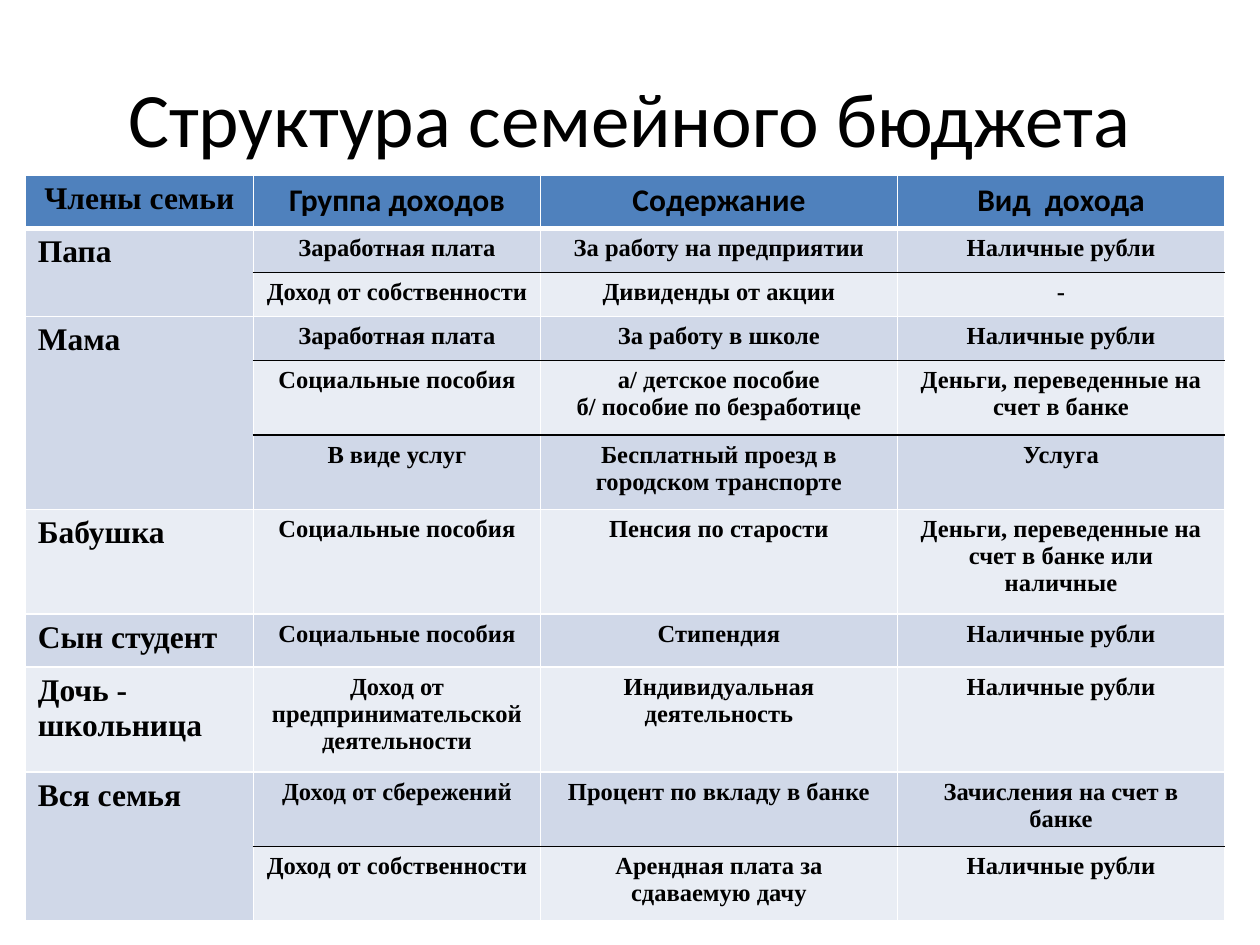
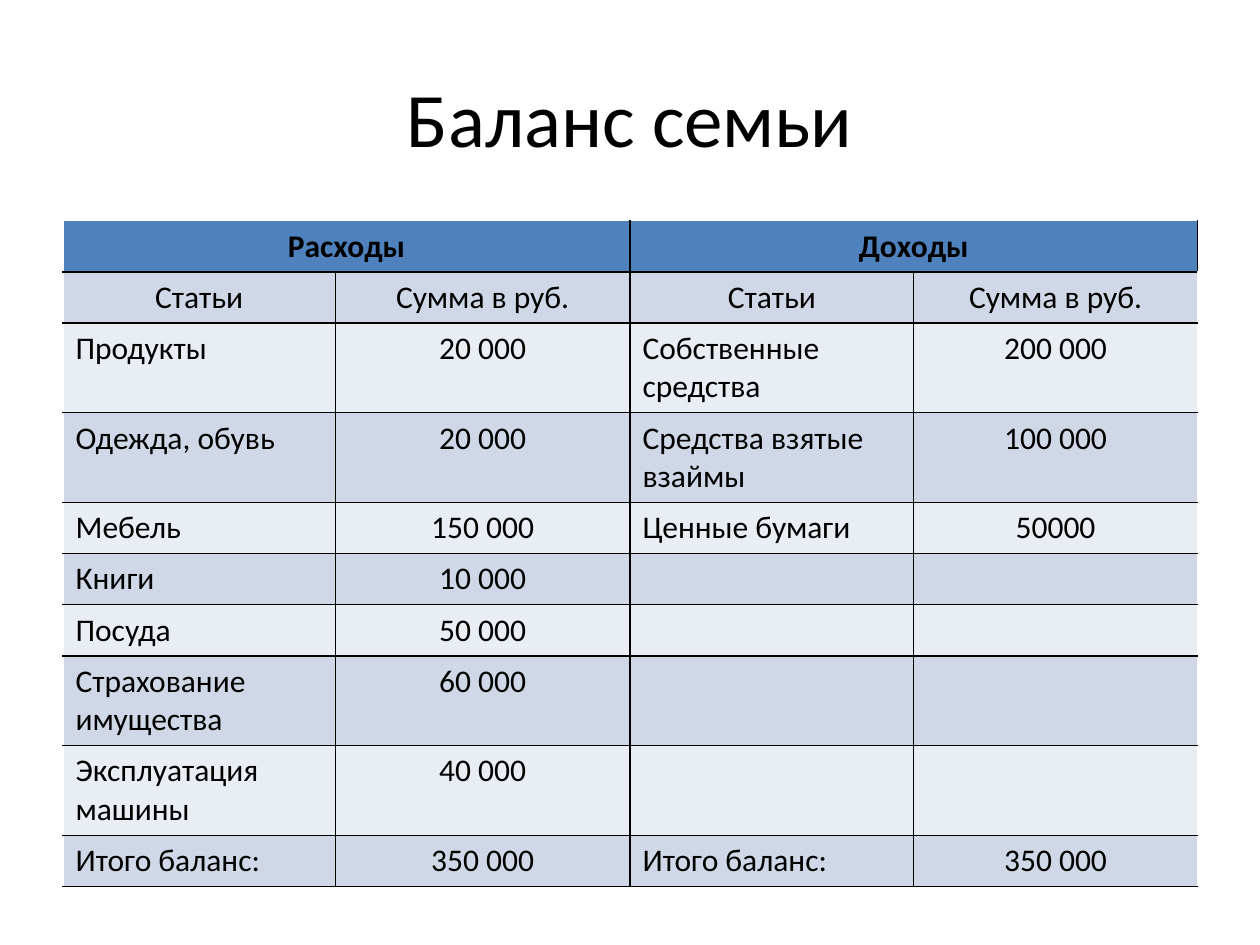
from lxml import etree
from pptx import Presentation
from pptx.dml.color import RGBColor as RGB
from pptx.enum.text import MSO_ANCHOR as ANCHOR, PP_ALIGN as ALIGN
from pptx.oxml.ns import qn
from pptx.util import Cm, Pt

COLORS = {"text": "000000", "header": "4F81BD", "dark_band": "D0D8E8",
          "light_band": "E9EDF4", "white": "FFFFFF", "black": "000000"}
SANS, SERIF = "Calibri", "Times New Roman"


def style_text(p, align, **formats):
    p.alignment = align
    for r in p.runs:
        for name, value in formats.items():
            setattr(r.font, name, value)
        r.font.color.rgb = RGB.from_string(COLORS["text"])


def set_borders(cell, edges):
    tcPr = cell._tc.get_or_add_tcPr()
    for k, (side, (color, width)) in enumerate(edges.items()):
        ln = etree.Element(qn(f"a:ln{side}"), w=str(Pt(width)))
        fill = etree.SubElement(ln, qn("a:solidFill"))
        etree.SubElement(fill, qn("a:srgbClr"), val=COLORS[color])
        tcPr.insert(k, ln)


# Income by family member; None marks a cell covered by a merge
income_rows = [
    ["Члены семьи", "Группа доходов", "Содержание", "Вид  дохода"],
    ["Папа", "Заработная плата", "За работу на предприятии", "Наличные рубли"],
    [None, "Доход от собственности", "Дивиденды от акции", "-"],
    ["Мама", "Заработная плата", "За работу в школе", "Наличные рубли"],
    [None, "Социальные пособия", "а/ детское пособие\nб/ пособие по безработице",
     "Деньги, переведенные на счет в банке"],
    [None, "В виде услуг", "Бесплатный проезд в городском транспорте", "Услуга"],
    ["Бабушка", "Социальные пособия", "Пенсия по старости",
     "Деньги, переведенные на счет в банке или наличные"],
    ["Сын студент", "Социальные пособия", "Стипендия", "Наличные рубли"],
    ["Дочь - школьница", "Доход от предпринимательской деятельности",
     "Индивидуальная деятельность", "Наличные рубли"],
    ["Вся семья", "Доход от сбережений", "Процент по вкладу в банке",
     "Зачисления на счет в банке"],
    [None, "Доход от собственности", "Арендная плата за сдаваемую дачу",
     "Наличные рубли"],
]

# Expenses beside income
balance_rows = [
    ["Расходы", None, "Доходы", None],
    ["Статьи", "Сумма в руб.", "Статьи", "Сумма в руб."],
    ["Продукты", "20 000", "Собственные средства", "200 000"],
    ["Одежда, обувь", "20 000", "Средства взятые взаймы", "100 000"],
    ["Мебель", "150 000", "Ценные бумаги", "50000"],
    ["Книги", "10 000", "", ""],
    ["Посуда", "50 000", "", ""],
    ["Страхование имущества", "60 000", "", ""],
    ["Эксплуатация машины", "40 000", "", ""],
    ["Итого баланс:", "350 000", "Итого баланс:", "350 000"],
]

# Lengths in cm; black_h and black_v number the grid lines drawn in black
slides = [
    {"title": "Структура семейного бюджета", "rows": income_rows,
     "left": 0.51, "top": 3.53, "widths": [4.6, 5.79, 7.19, 6.6],
     "heights": [1.07] + [0.89] * 3 + [1.5] * 2 + [2.11, 1.07, 2.11] + [1.5] * 2,
     "merges": [(1, 0, 2, 0), (3, 0, 5, 0), (9, 0, 10, 0)],
     "black_h": {2, 4, 5, 10}, "black_v": set(), "black_from": 1,
     "header_line": 3, "left_cols": {0}, "left_from": 1,
     "font": SERIF, "size": 14, "bold": True},
    {"title": "Баланс семьи", "rows": balance_rows,
     "left": 1.27, "top": 4.45, "widths": [5.49, 5.94, 5.72, 5.72],
     "heights": [1.03] * 2 + [1.81] * 2 + [1.03] * 3 + [1.81] * 2 + [1.03],
     "merges": [(0, 0, 0, 1), (0, 2, 0, 3)],
     "black_h": set(range(1, 11)), "black_v": {1, 2, 3}, "black_from": 0,
     "header_line": 1, "left_cols": {0, 2}, "left_from": 2,
     "font": SANS, "size": 18, "bold": False},
]

prs = Presentation()
prs.slide_width, prs.slide_height = Cm(25.4), Cm(19.05)

for d in slides:
    s = prs.slides.add_slide(prs.slide_layouts[6])

    # Title
    tf = s.shapes.add_textbox(Cm(1.27), Cm(0.76), Cm(22.86), Cm(3.18)).text_frame
    tf.word_wrap = True
    tf.vertical_anchor = ANCHOR.MIDDLE
    tf.text = d["title"]
    style_text(tf.paragraphs[0], ALIGN.CENTER, name=SANS, size=Pt(44))

    # Table grid
    rows, widths, heights = d["rows"], d["widths"], d["heights"]
    table = s.shapes.add_table(len(rows), len(widths), Cm(d["left"]), Cm(d["top"]),
                               Cm(sum(widths)), Cm(sum(heights))).table
    for col, width in zip(table.columns, widths):
        col.width = Cm(width)
    for row, height in zip(table.rows, heights):
        row.height = Cm(height)
    for r1, c1, r2, c2 in d["merges"]:
        table.cell(r1, c1).merge(table.cell(r2, c2))

    # Cells: fill, borders, text
    for i, row in enumerate(rows):
        band = "header" if i == 0 else "dark_band" if i % 2 else "light_band"
        for j, text in enumerate(row):
            cell = table.cell(i, j)
            cell.fill.solid()
            cell.fill.fore_color.rgb = RGB.from_string(COLORS[band])

            edges = {}
            for side, line in (("L", j), ("R", j + 1)):
                edges[side] = ("black" if line in d["black_v"] else "white", 1)
            for side, line in (("T", i), ("B", i + 1)):
                black = line in d["black_h"] and j >= d["black_from"]
                edges[side] = ("black" if black else "white",
                               d["header_line"] if line == 1 else 1)
            set_borders(cell, edges)

            if text is None:
                continue
            cell.text = text
            left = j in d["left_cols"] and i >= d["left_from"]
            heading = i == 0 or j == 0
            for p in cell.text_frame.paragraphs:
                style_text(p, ALIGN.LEFT if left else ALIGN.CENTER,
                           name=SANS if i == 0 and j > 0 else d["font"],
                           size=Pt(18 if heading else d["size"]),
                           bold=d["bold"] or i == 0)

prs.save("out.pptx")
